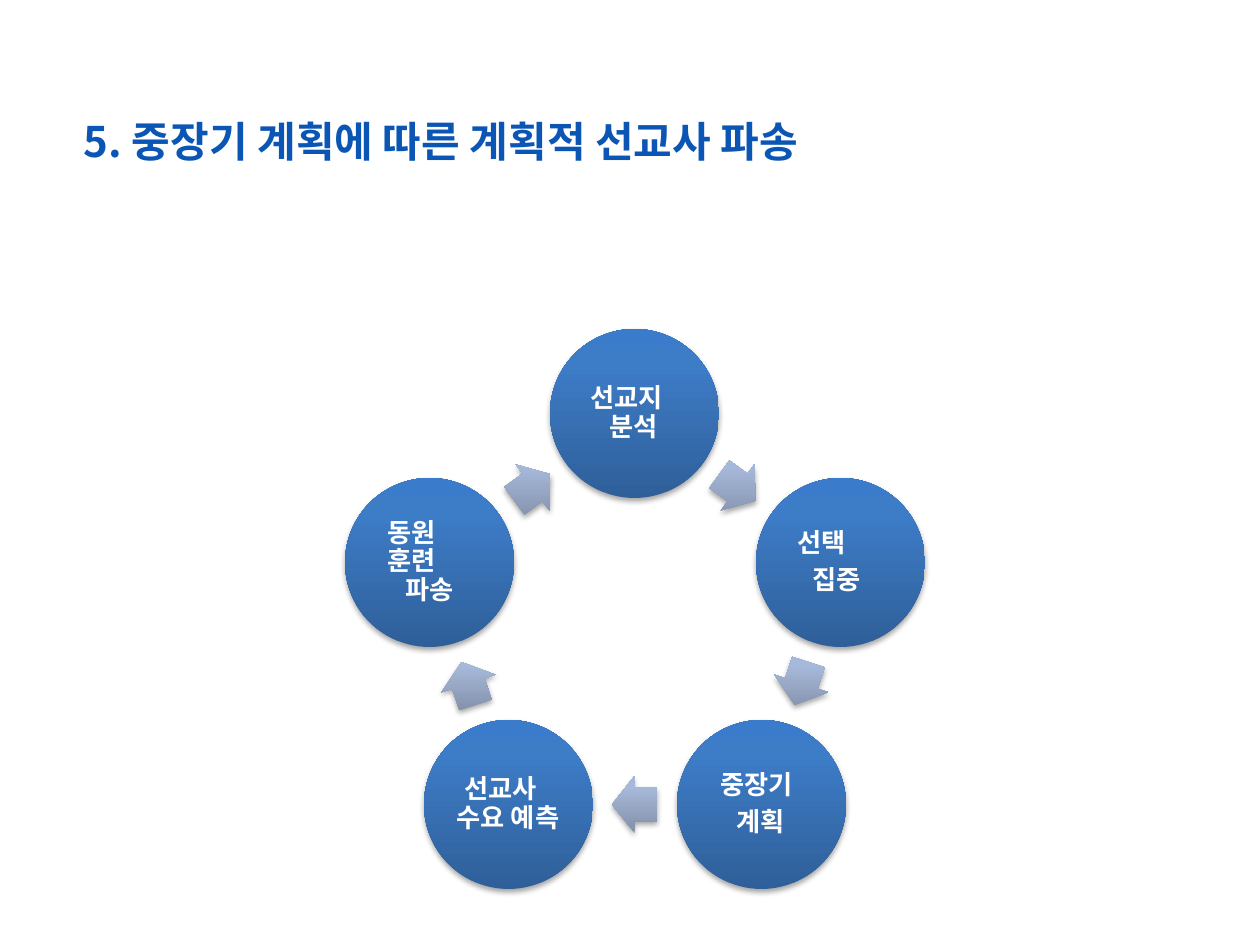
from dataclasses import dataclass
from math import cos, radians, sin

from lxml.etree import SubElement
from pptx import Presentation
from pptx.dml.color import RGBColor
from pptx.enum.shapes import MSO_SHAPE
from pptx.enum.text import MSO_ANCHOR, PP_ALIGN
from pptx.oxml import parse_xml
from pptx.oxml.ns import nsdecls, qn
from pptx.util import Pt

EMU_PER_PX = 914400 // 126


@dataclass(frozen=True)
class Theme:
    """Colours, fonts and type sizes of the slide."""
    title_color: str = "0B55B5"
    label_color: str = "FFFFFF"
    circle_stops: tuple = ((0, "2F5F99"), (80, "3D7CC7"), (100, "3A7CCB"))
    arrow_stops: tuple = ((0, "818FA8"), (80, "A7B9DA"), (100, "A7BADC"))
    title_font: str = "Noto Sans CJK KR"
    label_font: str = "Cambria"
    title_size: int = 24
    label_size: int = 15


THEME = Theme()

STEPS = (
    (0, (("선교지", 13), ("분석", 32))),
    (5, (("선택", 14), ("집중", 29))),
    (5, (("중장기", 16), ("계획", 32))),
    (0, (("선교사", 13), ("수요 예측", 5))),
    (0, (("동원", 15), ("훈련", 15), ("파송", 33))),
)


def px(length):
    """Turn a length in px into EMU."""
    return round(length) * EMU_PER_PX


def write_text(para, text, *, font, size, color, indent=0, line=1.0, after=0):
    """Write one bold, left-aligned paragraph."""
    para.alignment = PP_ALIGN.LEFT
    para.line_spacing = line
    para.space_after = Pt(after)
    para._p.get_or_add_pPr().set("marL", str(px(indent)))
    span = para.add_run()
    span.text = text
    span.font.name = font
    span.font.size = Pt(size)
    span.font.bold = True
    span.font.color.rgb = RGBColor.from_string(color)
    return span


def set_margins(frame, margin):
    """Give a text frame the same margin on all sides."""
    frame.margin_left = frame.margin_right = px(margin)
    frame.margin_top = frame.margin_bottom = px(margin)


def add_glossy_shape(page, kind, center, size, stops):
    """Add a preset shape with an upright gradient and a soft shadow."""
    (x, y), (width, height) = center, size
    shape = page.shapes.add_shape(
        kind, px(x - width / 2), px(y - height / 2), px(width), px(height))
    shape.line.fill.background()
    properties = shape._element.spPr
    stop_xml = "".join(
        f'<a:gs pos="{place * 1000}"><a:srgbClr val="{color}"/></a:gs>'
        for place, color in stops)
    gradient = parse_xml(
        f'<a:gradFill {nsdecls("a")} rotWithShape="0"><a:gsLst>{stop_xml}</a:gsLst>'
        '<a:lin ang="16200000" scaled="0"/></a:gradFill>')
    properties.find(qn("a:prstGeom")).addnext(gradient)
    properties.append(parse_xml(
        f'<a:effectLst {nsdecls("a")}><a:outerShdw blurRad="40000" dist="23000" '
        'dir="5400000" rotWithShape="0"><a:srgbClr val="000000">'
        '<a:alpha val="35000"/></a:srgbClr></a:outerShdw></a:effectLst>'))
    return shape


def add_title(page, left, top, width, height, text):
    """Add the slide title."""
    box = page.shapes.add_textbox(px(left), px(top), px(width), px(height))
    frame = box.text_frame
    frame.word_wrap = True
    set_margins(frame, 0)
    span = write_text(frame.paragraphs[0], text, font=THEME.title_font,
                      size=THEME.title_size, color=THEME.title_color)
    east_asian = SubElement(span.font._element, qn("a:ea"))
    east_asian.set("typeface", THEME.title_font)


def add_step(page, center, diameter, gap, lines):
    """Add one circle with its staggered label lines."""
    circle = add_glossy_shape(page, MSO_SHAPE.OVAL, center,
                              (diameter, diameter), THEME.circle_stops)
    frame = circle.text_frame
    frame.word_wrap = True
    frame.vertical_anchor = MSO_ANCHOR.MIDDLE
    set_margins(frame, 3)
    for index, (text, indent) in enumerate(lines):
        para = frame.add_paragraph() if index else frame.paragraphs[0]
        write_text(para, text, font=THEME.label_font, size=THEME.label_size,
                   color=THEME.label_color, indent=indent, line=0.9, after=gap)


def add_cycle(page, left, top, width, steps):
    """Place the steps clockwise on a ring, with an arrow after each."""
    diameter, ring, arrow_ring = 169, 216, 175
    center_x, center_y = left + width / 2, top + diameter / 2 + ring
    turn = 360 / len(steps)

    def on_ring(angle, radius):
        """Find the point at a clockwise angle from the top."""
        return (center_x + radius * sin(radians(angle)),
                center_y - radius * cos(radians(angle)))

    for index, (gap, lines) in enumerate(steps):
        angle = index * turn
        add_step(page, on_ring(angle, ring), diameter, gap, lines)
        middle = angle + turn / 2
        arrow = add_glossy_shape(page, MSO_SHAPE.RIGHT_ARROW,
                                 on_ring(middle, arrow_ring), (45, 57),
                                 THEME.arrow_stops)
        arrow.adjustments[0] = 0.6
        arrow.adjustments[1] = 0.5
        arrow.rotation = middle


def main():
    """Build the slide and save it."""
    deck = Presentation()
    deck.slide_width, deck.slide_height = px(1260), px(945)
    page = deck.slides.add_slide(deck.slide_layouts[6])
    add_title(page, 84, 116, 979, 50, "5. 중장기 계획에 따른 계획적 선교사 파송")
    add_cycle(page, 345, 329, 580, STEPS)
    deck.save("out.pptx")


if __name__ == "__main__":
    main()
